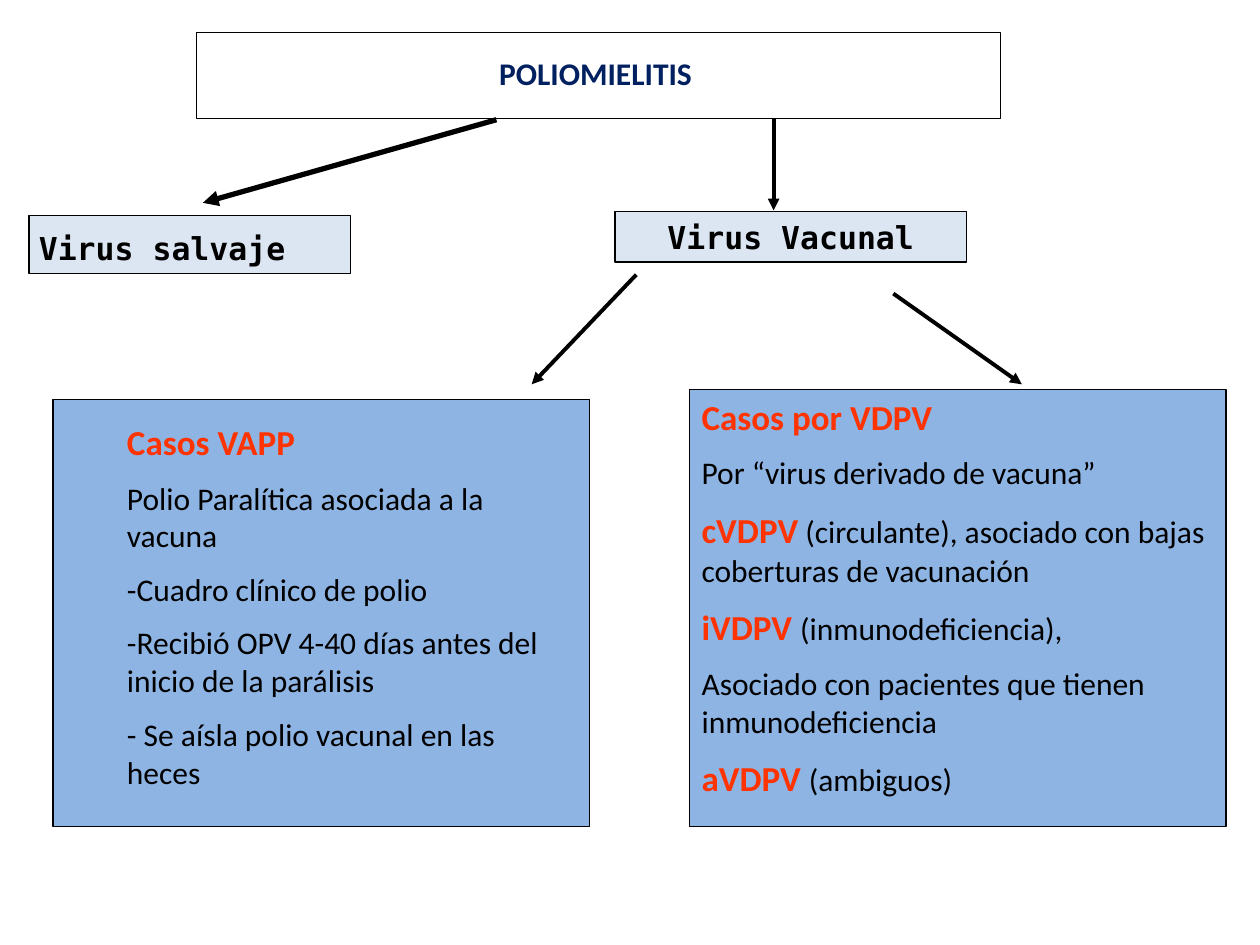
from lxml import etree
from pptx import Presentation
from pptx.dml.color import RGBColor
from pptx.enum.shapes import MSO_CONNECTOR, MSO_SHAPE
from pptx.enum.text import MSO_ANCHOR, MSO_AUTO_SIZE, PP_ALIGN
from pptx.oxml.ns import qn
from pptx.util import Inches, Pt

RECTANGLE = MSO_SHAPE.RECTANGLE
STRAIGHT = MSO_CONNECTOR.STRAIGHT
LEFT, CENTER = PP_ALIGN.LEFT, PP_ALIGN.CENTER
TOP = MSO_ANCHOR.TOP
NO_AUTOFIT = MSO_AUTO_SIZE.NONE

COLORS = {"black": "000000", "title": "002060", "accent": "FF3300",
          "virus": "DCE6F2", "cases": "8EB4E3"}
BODY_FONT, VIRUS_FONT = "Calibri", "DejaVu Sans Mono"
BODY_SIZE, ACCENT_SIZE = 18, 20


def plain(text):
    return text, BODY_FONT, BODY_SIZE, "black", False


def accent(text):
    return text, BODY_FONT, ACCENT_SIZE, "accent", True


def virus(text):
    return text, VIRUS_FONT, BODY_SIZE, "black", True


VAPP_CASES = [
    [accent("Casos VAPP")],
    [plain("Polio Paralítica asociada a la vacuna")],
    [plain("-Cuadro clínico de polio")],
    [plain("-Recibió OPV 4-40 días antes del inicio de la parálisis")],
    [plain("- Se aísla polio vacunal en las heces")],
]
VDPV_CASES = [
    [accent("Casos por VDPV")],
    [plain("Por “virus derivado de vacuna”")],
    [accent("cVDPV"), plain(" (circulante), asociado con bajas coberturas de vacunación")],
    [accent("iVDPV "), plain("(inmunodeficiencia),")],
    [plain("Asociado con pacientes que tienen inmunodeficiencia")],
    [accent("aVDPV "), plain("(ambiguos)")],
]


class DiagramSlide:
    def __init__(self, presentation):
        self.slide = presentation.slides.add_slide(presentation.slide_layouts[5])
        self.shapes = self.slide.shapes

    def color(self, name):
        return RGBColor.from_string(COLORS[name])

    def fill_text(self, shape, paragraphs, alignment=LEFT):
        text_frame = shape.text_frame
        text_frame.word_wrap = True
        text_frame.auto_size = NO_AUTOFIT
        text_frame.vertical_anchor = TOP
        for index, parts in enumerate(paragraphs):
            paragraph = text_frame.add_paragraph() if index else text_frame.paragraphs[0]
            paragraph.alignment = alignment
            paragraph.space_before = Pt(max(part[2] for part in parts) / 2 if index else 0)
            for text, font_name, size, color, bold in parts:
                run = paragraph.add_run()
                run.text = text
                run.font.name = font_name
                run.font.size = Pt(size)
                run.font.bold = bold
                run.font.color.rgb = self.color(color)

    def title(self, text, left, top, width, height):
        title = self.shapes.title
        title.left, title.top = Inches(left), Inches(top)
        title.width, title.height = Inches(width), Inches(height)
        self.fill_text(title, [[(text, BODY_FONT, BODY_SIZE, "title", True)]], CENTER)

    def box(self, left, top, width, height, fill=None):
        shape = self.shapes.add_shape(
            RECTANGLE, Inches(left), Inches(top), Inches(width), Inches(height))
        shape.shadow.inherit = False
        if fill:
            shape.fill.solid()
            shape.fill.fore_color.rgb = self.color(fill)
        else:
            shape.fill.background()
        shape.line.color.rgb = self.color("black")
        shape.line.width = Pt(0.75)
        return shape

    def text(self, paragraphs, left, top, width, height):
        shape = self.shapes.add_textbox(
            Inches(left), Inches(top), Inches(width), Inches(height))
        self.fill_text(shape, paragraphs)

    def arrow(self, start, end, width=2.25):
        connector = self.shapes.add_connector(
            STRAIGHT, *(Inches(value) for value in start + end))
        connector.line.color.rgb = self.color("black")
        connector.line.width = Pt(width)
        properties = connector._element.spPr
        line = properties.find(qn("a:ln"))
        etree.SubElement(line, qn("a:tailEnd"), type="triangle")
        etree.SubElement(properties, qn("a:effectLst"))


def main():
    presentation = Presentation()
    presentation.slide_width, presentation.slide_height = Inches(10), Inches(7.5)
    diagram = DiagramSlide(presentation)

    diagram.title("POLIOMIELITIS ", 0.68, 0.38, 8.15, 0.4)
    diagram.box(1.56, 0.26, 6.38, 0.68)

    diagram.box(0.23, 1.71, 2.55, 0.46, "virus")
    diagram.text([[virus("Virus salvaje")]], 0.21, 1.77, 4.3, 0.4)
    vaccine_box = diagram.box(4.88, 1.68, 2.79, 0.4, "virus")
    diagram.fill_text(vaccine_box, [[virus("Virus Vacunal")]], CENTER)

    diagram.box(0.42, 3.17, 4.26, 3.39, "cases")
    diagram.text(VAPP_CASES, 0.91, 3.29, 3.73, 3.14)
    vdpv_box = diagram.box(5.47, 3.09, 4.26, 3.47, "cases")
    diagram.fill_text(vdpv_box, VDPV_CASES)

    diagram.arrow((3.94, 0.95), (1.61, 1.61), 3)
    diagram.arrow((6.14, 0.94), (6.14, 1.67))
    diagram.arrow((5.05, 2.18), (4.22, 3.05))
    diagram.arrow((7.09, 2.33), (8.11, 3.05))

    presentation.save("out.pptx")


if __name__ == "__main__":
    main()
